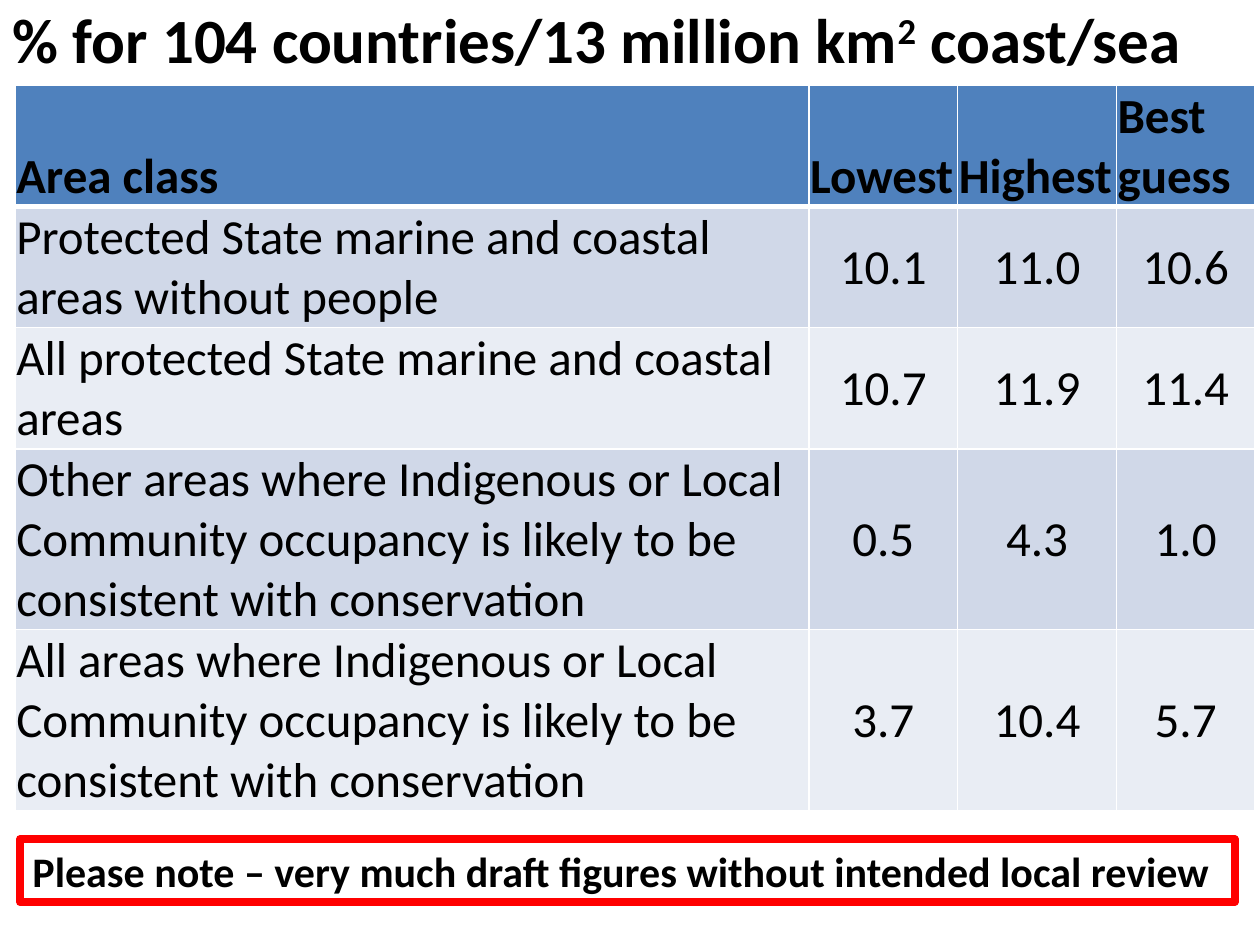
"""Build the slide of marine and coastal area shares by area class."""
import lxml.etree
import pptx
import pptx.dml.color
import pptx.enum.text
import pptx.oxml.ns
import pptx.util

COLOURS = {
    "text": "000000",
    "header": "4F81BD",
    "odd": "D0D8E8",
    "even": "E9EDF4",
    "border": "FFFFFF",
    "warning": "FF0000",
}
FONT = "Calibri"
COLUMN_WIDTHS = (6.3, 1.18, 1.26, 1.1)
ROW_HEIGHT = 0.43
OCCUPANCY = "areas where Indigenous or Local Community occupancy is likely to be consistent with conservation"
AREA_ROWS = (
    ("Area class", "Lowest", "Highest", "Best guess"),
    ("Protected State marine and coastal areas without people", "10.1", "11.0", "10.6"),
    ("All protected State marine and coastal areas", "10.7", "11.9", "11.4"),
    (f"Other {OCCUPANCY}", "0.5", "4.3", "1.0"),
    (f"All {OCCUPANCY}", "3.7", "10.4", "5.7"),
)
ALIGN = pptx.enum.text.PP_ALIGN
ANCHOR = pptx.enum.text.MSO_ANCHOR
AUTO_SIZE = pptx.enum.text.MSO_AUTO_SIZE


def colour(name):
    """Return the named colour."""
    return pptx.dml.color.RGBColor.from_string(COLOURS[name])


def inches(*lengths):
    """Convert lengths in inches."""
    return [pptx.util.Inches(length) for length in lengths]


def write(frame, *pieces, size=28, bold=False, align=ALIGN.LEFT, raised=()):
    """Write the pieces as runs of one paragraph, lifting those whose index is in raised."""
    paragraph = frame.paragraphs[0]
    paragraph.alignment = align
    for index, piece in enumerate(pieces):
        run = paragraph.add_run()
        run.text = piece
        run.font.name = FONT
        run.font.size = pptx.util.Pt(size)
        run.font.bold = bold
        run.font.color.rgb = colour("text")
        if index in raised:
            run.font._element.set("baseline", "30000")


def draw_borders(cell, **widths):
    """Draw the cell's borders in white, with widths in points by side letter."""
    properties = cell._tc.get_or_add_tcPr()
    for side in "LRTB":
        width = pptx.util.Pt(widths.get(side, 1))
        line = lxml.etree.SubElement(properties, pptx.oxml.ns.qn(f"a:ln{side}"), w=str(width))
        fill = lxml.etree.SubElement(line, pptx.oxml.ns.qn("a:solidFill"))
        lxml.etree.SubElement(fill, pptx.oxml.ns.qn("a:srgbClr"), val=COLOURS["border"])


def format_cell(cell, row, column, text):
    """Fill one table cell according to its row and column."""
    is_header = row == 0
    cell.margin_left, cell.margin_right, cell.margin_top, cell.margin_bottom = inches(0.01, 0.01, 0.01, 0)
    cell.vertical_anchor = ANCHOR.BOTTOM if is_header else ANCHOR.MIDDLE
    draw_borders(cell, T=3 if row == 1 else 1, B=3 if is_header else 1)
    cell.fill.solid()
    cell.fill.fore_color.rgb = colour("header" if is_header else "odd" if row % 2 else "even")
    align = ALIGN.LEFT if is_header or column == 0 else ALIGN.CENTER
    write(cell.text_frame, text, bold=is_header, align=align)


def add_area_table(slide):
    """Add the table of area classes, whose rows grow to fit their text."""
    left, top, width, height = inches(0.12, 0.68, sum(COLUMN_WIDTHS), 5.64)
    holder = slide.shapes.add_table(len(AREA_ROWS), len(COLUMN_WIDTHS), left, top, width, height)
    table = holder.table
    for column, column_width in zip(table.columns, inches(*COLUMN_WIDTHS)):
        column.width = column_width
    for row_index, values in enumerate(AREA_ROWS):
        table.rows[row_index].height = pptx.util.Inches(ROW_HEIGHT)
        for column_index, value in enumerate(values):
            format_cell(table.cell(row_index, column_index), row_index, column_index, value)
    holder.height = height


def set_title(slide):
    """Place and write the title."""
    title = slide.shapes.title
    title.left, title.top, title.width, title.height = inches(0, 0, 10, 0.6)
    title.text_frame.auto_size = AUTO_SIZE.NONE
    title.text_frame.vertical_anchor = ANCHOR.MIDDLE
    write(title.text_frame, "% for 104 countries/13 million km", "2", " coast/sea", size=36, bold=True, raised=(1,))


def add_draft_note(slide):
    """Add the outlined note on the draft figures."""
    note = slide.shapes.add_textbox(*inches(0.16, 6.66, 9.64, 0.5))
    note.line.color.rgb = colour("warning")
    note.line.width = pptx.util.Pt(4.5)
    note.text_frame.word_wrap = False
    note.text_frame.auto_size = AUTO_SIZE.SHAPE_TO_FIT_TEXT
    write(note.text_frame, "Please note – very much draft figures without intended local review", size=24, bold=True)


def main():
    """Build and save the slide."""
    deck = pptx.Presentation()
    deck.slide_width, deck.slide_height = inches(10, 7.5)
    slide = deck.slides.add_slide(deck.slide_layouts.get_by_name("Title Only"))
    add_area_table(slide)
    set_title(slide)
    add_draft_note(slide)
    deck.save("out.pptx")


if __name__ == "__main__":
    main()
